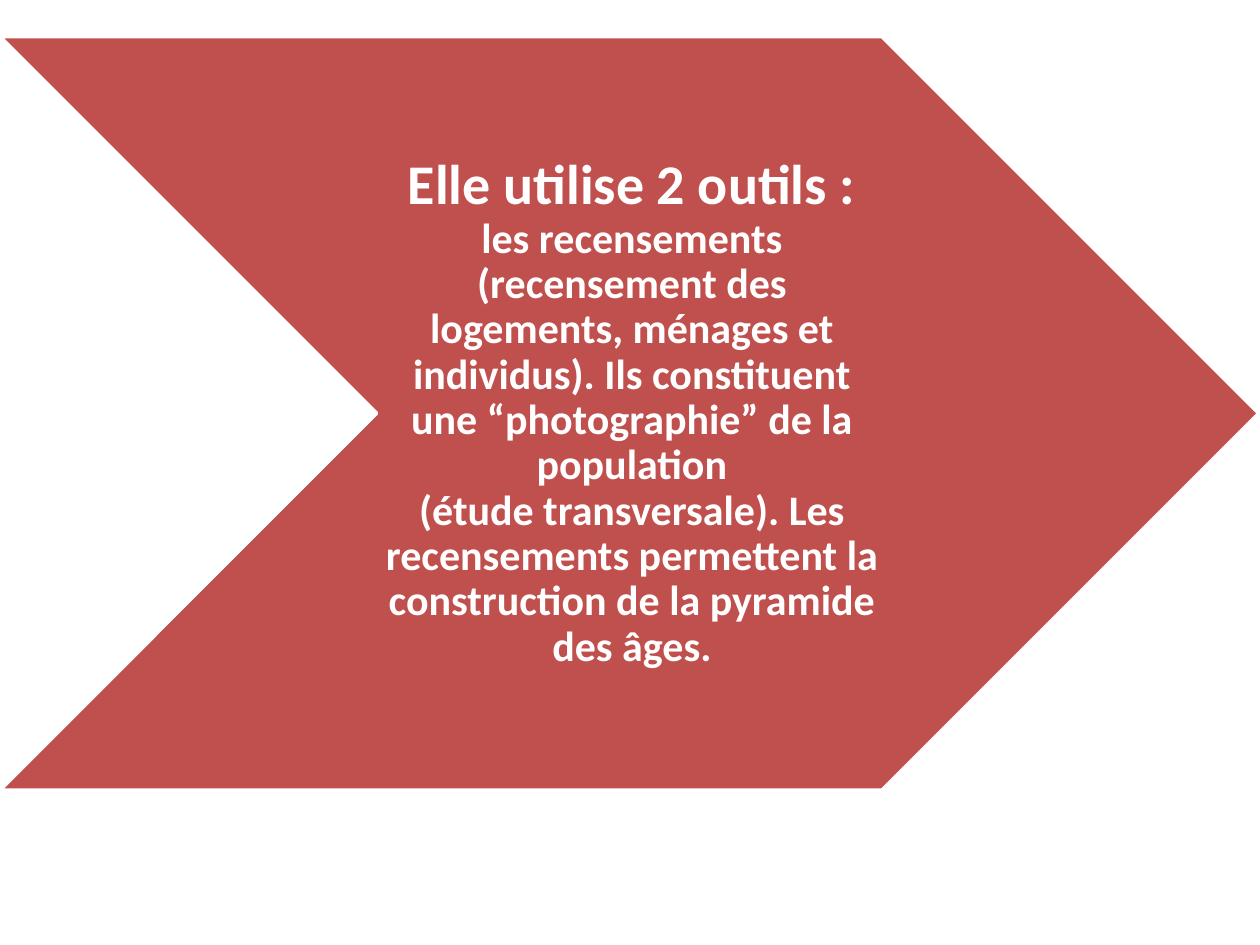
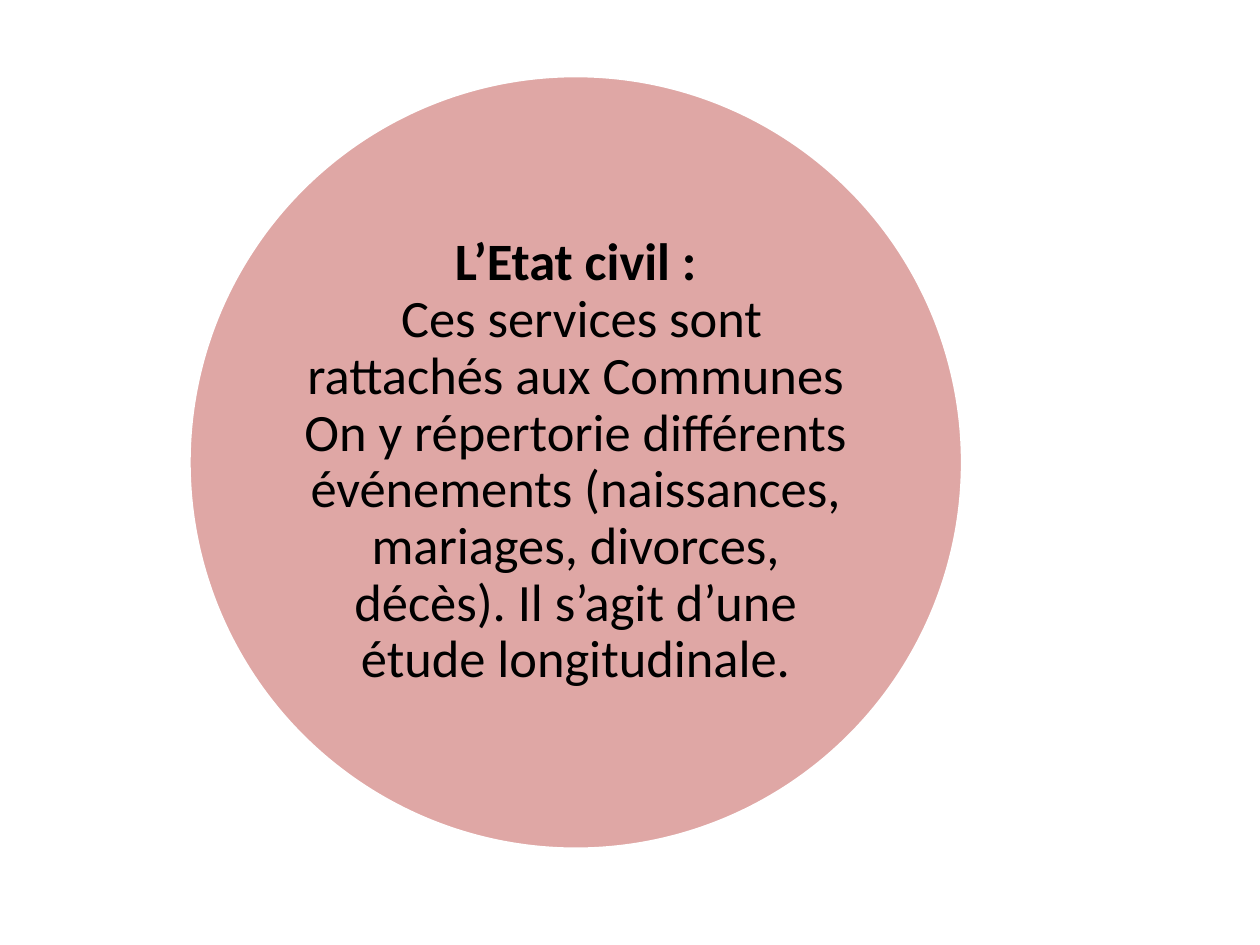
"""Two slides on the tools of demography: the census and the civil registry."""
from lxml.etree import SubElement
from pptx import Presentation
from pptx.dml.color import RGBColor
from pptx.enum.shapes import MSO_SHAPE as Shape
from pptx.enum.text import MSO_ANCHOR as Anchor, PP_ALIGN as Align
from pptx.oxml.ns import qn
from pptx.util import Inches, Pt

RED = RGBColor(0xC0, 0x50, 0x4D)
WHITE = RGBColor(0xFF, 0xFF, 0xFF)
BLACK = RGBColor(0x00, 0x00, 0x00)
FONT = "Calibri"


def add_panel(slide, preset, left, top, width, height):
    """Add a red panel with a white outline."""
    panel = slide.shapes.add_shape(
        preset, Inches(left), Inches(top), Inches(width), Inches(height))
    panel.shadow.inherit = False
    panel.fill.solid()
    panel.fill.fore_color.rgb = RED
    panel.line.color.rgb = WHITE
    panel.line.width = Pt(2)
    return panel


def add_message(slide, box, insets, lines, color, heading_size, body_size, body_bold):
    """Add a centred message whose first line is its heading."""
    frame = slide.shapes.add_textbox(*[Inches(length) for length in box]).text_frame
    frame.word_wrap = True
    frame.vertical_anchor = Anchor.MIDDLE
    (frame.margin_left, frame.margin_top,
     frame.margin_right, frame.margin_bottom) = [Inches(inset) for inset in insets]
    message = frame.paragraphs[0]
    message.alignment = Align.CENTER
    message.line_spacing = 0.9
    message.font.name = FONT
    message.font.color.rgb = color
    for row, line in enumerate(lines):
        if row:
            message.add_line_break()
        run = message.add_run()
        run.text = line
        run.font.size = Pt(body_size if row else heading_size)
        run.font.bold = body_bold if row else True


deck = Presentation()
deck.slide_width, deck.slide_height = Inches(10), Inches(7.5)
blank = deck.slide_layouts[6]

census = deck.slides.add_slide(blank)
band_top, band_height = 0.29, 5.98
notch = band_height / 2
add_panel(census, Shape.CHEVRON, 0, band_top, 9.99, band_height)
add_message(
    census, (notch, band_top, 9.99 - 2 * notch, band_height), (0.04, 0.02, 0, 0.02),
    ["Elle utilise 2 outils :",
     "les recensements (recensement des logements, ménages et individus). "
     "Ils constituent une “photographie” de la population",
     "(étude transversale). Les recensements permettent la construction "
     "de la pyramide des âges."],
    WHITE, 32, 24, True)

registry = deck.slides.add_slide(blank)
left, top, diameter, inset = 1.5, 0.6, 6.14, 0.9
disc = add_panel(registry, Shape.OVAL, left, top, diameter, diameter)
tint = disc.fill._xPr.find(qn("a:solidFill"))[0]
SubElement(tint, qn("a:alpha"), val="50000")
side = diameter - 2 * inset
add_message(
    registry, (left + inset, top + inset, side, side), (0, 0, 0, 0),
    ["L’Etat civil :",
     " Ces services sont rattachés aux Communes",
     "On y répertorie différents événements (naissances, mariages, "
     "divorces, décès). Il s’agit d’une étude longitudinale."],
    BLACK, 30, 30, False)

deck.save("out.pptx")
